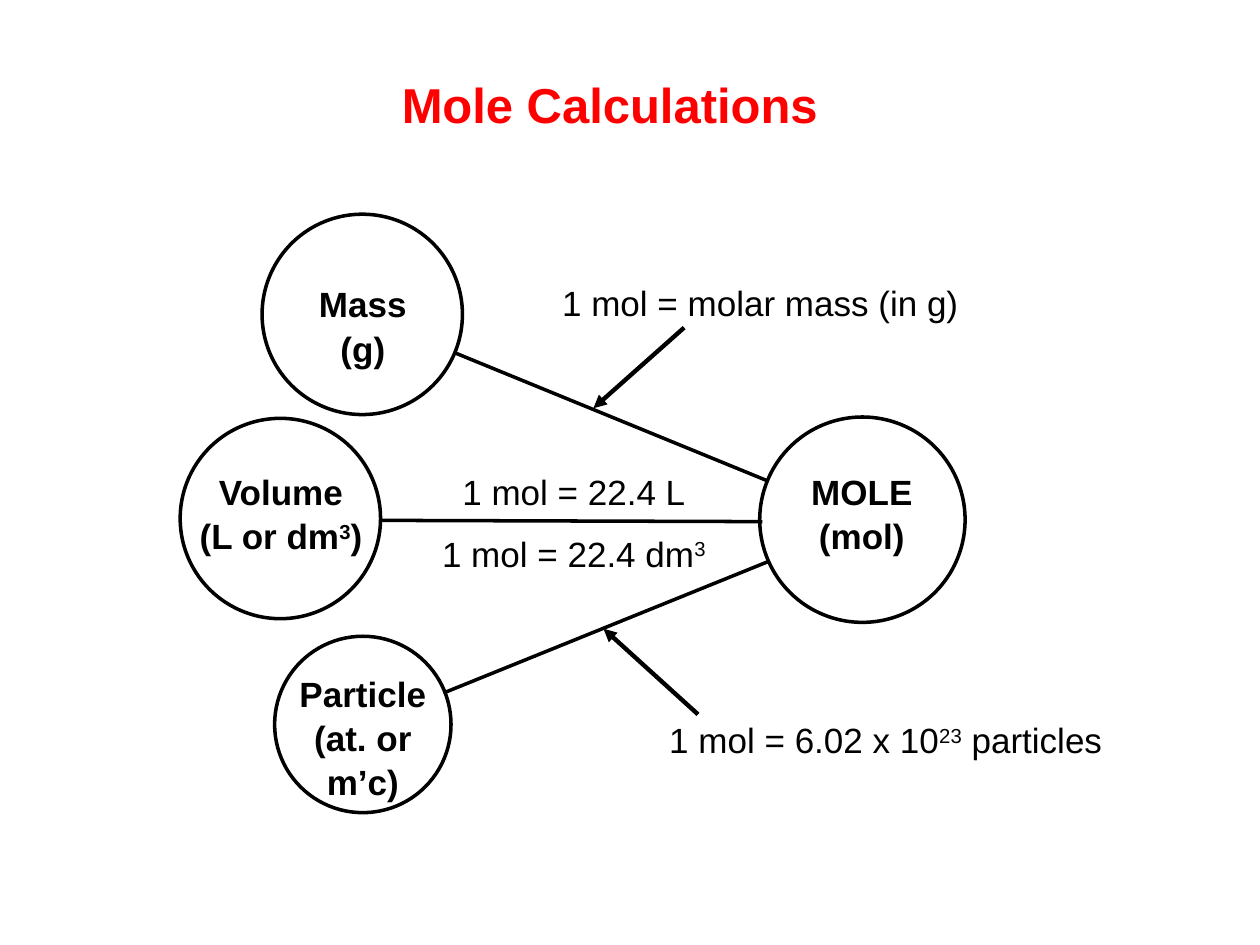
from pptx import Presentation
from pptx.dml.color import RGBColor
from pptx.enum.shapes import MSO_CONNECTOR, MSO_SHAPE
from pptx.enum.text import MSO_ANCHOR, PP_ALIGN
from pptx.oxml.ns import qn
from pptx.util import Emu, Pt
from lxml.etree import SubElement

EMU_PER_PX = 9144  # 100 px to the inch
BLACK, RED = "000000", "FF0000"

# Circle left, top, diameter; caption left, top, width, height; lines
NODES = [
    ((208, 170, 159), (218, 218, 140, 99), ["Mass", "(g)"]),
    ((143, 332, 159), (128, 367, 190, 99), ["Volume", "(L or dm^3^)"]),
    ((218, 505, 140), (218, 527, 140, 113), ["Particle", "(at. or m’c)"]),
    ((603, 331, 163), (614, 367, 140, 99), ["MOLE", "(mol)"]),
]
LABELS = [
    ((416, 217, 375, 50), "1 mol = molar mass (in g)"),
    ((268, 367, 375, 50), "1 mol = 22.4 L"),
    ((268, 416, 375, 50), "1 mol = 22.4 dm^3^"),
    ((505, 564, 396, 52), "1 mol = 6.02 x 10^23^ particles"),
]
LINKS = [(361, 280, 610, 382), (301, 413, 605, 414), (352, 550, 609, 446)]
POINTERS = [(543, 260, 471, 324), (554, 567, 479, 499)]


def px(*lengths):
    return [Emu(length * EMU_PER_PX) for length in lengths]


def color(hex_code):
    return RGBColor.from_string(hex_code)


def add_text(slide, box, lines, size=20, bold=False, hex_code=BLACK,
             align=PP_ALIGN.CENTER, spacing=1.05):
    """Add a text box; text between carets is set as superscript."""
    frame = slide.shapes.add_textbox(*px(*box)).text_frame
    frame.word_wrap = True
    for index, line in enumerate(lines):
        para = frame.paragraphs[0] if index == 0 else frame.add_paragraph()
        para.alignment = align
        para.line_spacing = spacing
        para.font.name = "Arial"
        para.font.size = Pt(size)
        para.font.bold = bold
        para.font.color.rgb = color(hex_code)
        for part, text in enumerate(line.split("^")):
            if text:
                span = para.add_run()
                span.text = text
                if part % 2:
                    span._r.get_or_add_rPr().set("baseline", "30000")
    return frame


def add_title(slide, box):
    frame = add_text(slide, box, ["Mole Calculations"], 28, True, RED,
                     PP_ALIGN.LEFT, 1.0)
    frame.word_wrap = False
    frame.vertical_anchor = MSO_ANCHOR.MIDDLE


def add_node(slide, circle, caption, lines):
    left, top, diameter = circle
    oval = slide.shapes.add_shape(
        MSO_SHAPE.OVAL, *px(left, top, diameter, diameter))
    oval.shadow.inherit = False
    oval.fill.background()
    oval.line.color.rgb = color(BLACK)
    oval.line.width = Pt(2)
    add_text(slide, caption, lines, bold=True)


def add_line(slide, ends, width=2, arrow=False):
    line = slide.shapes.add_connector(MSO_CONNECTOR.STRAIGHT, *px(*ends))
    line.line.color.rgb = color(BLACK)
    line.line.width = Pt(width)
    if arrow:
        SubElement(line.line._get_or_add_ln(), qn("a:tailEnd"), type="triangle")
    SubElement(line._element.spPr, qn("a:effectLst"))


def add_mole_diagram(slide):
    for circle, caption, lines in NODES:
        add_node(slide, circle, caption, lines)
    for ends in LINKS:
        add_line(slide, ends)
    for ends in POINTERS:
        add_line(slide, ends, 2.5, arrow=True)
    for box, text in LABELS:
        add_text(slide, box, [text])


def main():
    deck = Presentation()
    deck.slide_width, deck.slide_height = px(1000, 750)
    slide = deck.slides.add_slide(deck.slide_layouts[6])
    add_title(slide, (309, 54, 362, 57))
    add_mole_diagram(slide)
    deck.save("out.pptx")


if __name__ == "__main__":
    main()
